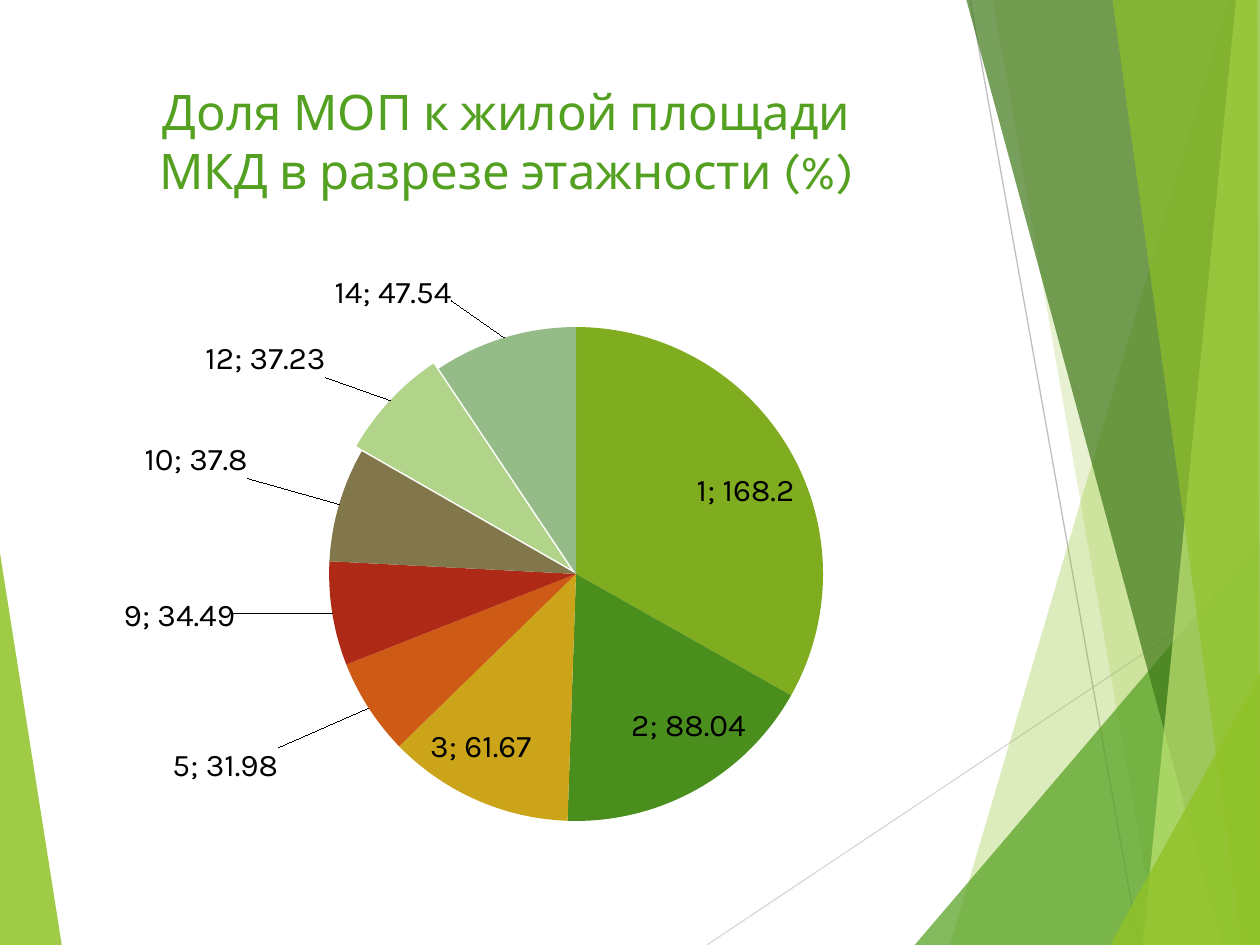
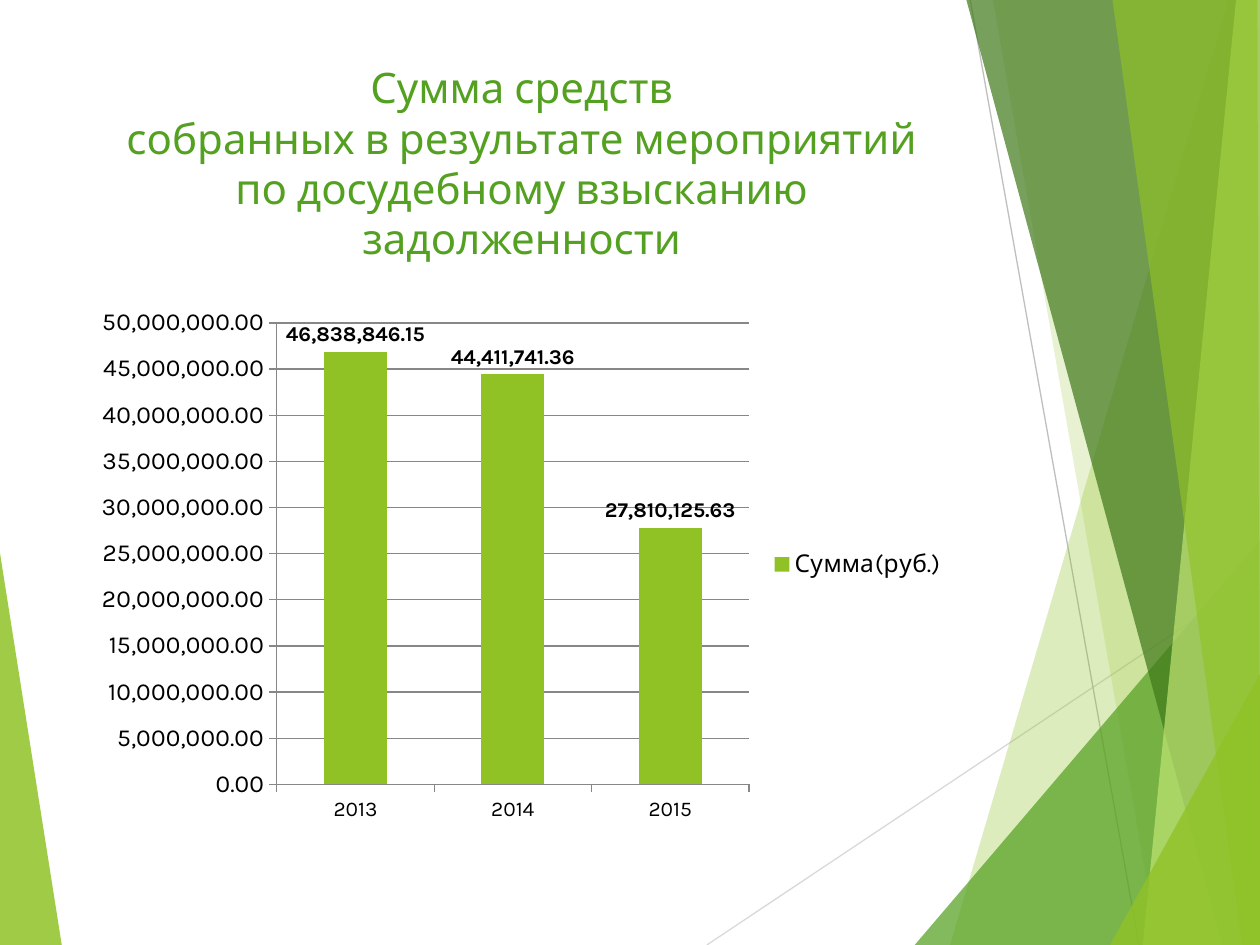
from lxml import etree
from pptx import Presentation
from pptx import util as u
from pptx.chart.data import CategoryChartData
from pptx.dml.color import RGBColor
from pptx.enum import chart as kinds, shapes, text
from pptx.oxml import ns

FONT = "Karla"
LIME = RGBColor(0x90, 0xC2, 0x26)
GREEN = RGBColor(0x54, 0xA0, 0x21)
DARK_GREEN = RGBColor(0x3F, 0x78, 0x19)
PALE_LIME = RGBColor(0xC0, 0xE4, 0x74)
LIGHT_GREY = RGBColor(0xD9, 0xD9, 0xD9)
GREY = RGBColor(0xBF, 0xBF, 0xBF)
AXIS_GREY = RGBColor(0x87, 0x87, 0x87)
BLACK = RGBColor(0, 0, 0)

WIDTH, HEIGHT = 10, 7.5

LEFT_FACET = (LIME, 85, [(0, 4.39), (0.49, HEIGHT), (0, HEIGHT)])
RIGHT_FACETS = [
    (LIME, 30, [(9.75, 0), (7.54, HEIGHT), (WIDTH, HEIGHT), (WIDTH, 0)]),
    (LIME, 20, [(7.88, 0), (9.19, HEIGHT), (WIDTH, HEIGHT), (WIDTH, 0)]),
    (GREEN, 72, [(7.26, HEIGHT), (WIDTH, 4.29), (WIDTH, HEIGHT)]),
    (DARK_GREEN, 70, [(7.67, 0), (9.7, HEIGHT), (WIDTH, HEIGHT), (WIDTH, 0)]),
    (PALE_LIME, 70, [(9.81, 0), (9.07, HEIGHT), (WIDTH, HEIGHT), (WIDTH, 0)]),
    (LIME, 65, [(8.83, 0), (9.86, HEIGHT), (WIDTH, HEIGHT), (9.98, 0)]),
    (LIME, 80, [(8.81, HEIGHT), (WIDTH, 5.35), (WIDTH, HEIGHT)]),
]
RAYS = [
    (LIGHT_GREY, (5.61, HEIGHT), (WIDTH, 4.57)),
    (GREY, (7.7, 0), (9.04, HEIGHT)),
]

FLOORS = {
    "title": ["Доля МОП к жилой площади МКД в разрезе этажности (%)"],
    "title_box": (0.83, 0.6, 6.38, 1.1),
    "title_size": 28,
    "chart_box": (0.98, 2.18, 6.69, 4.72),
    "plot_area": (0.244, 0.088, 0.586, 0.831),
    "slices": [
        ("1", 168.2, RGBColor(0x80, 0xAC, 0x20), None),
        ("2", 88.04, RGBColor(0x4A, 0x8F, 0x1D), None),
        ("3", 61.67, RGBColor(0xCB, 0xA4, 0x1A), None),
        ("5", 31.98, RGBColor(0xCD, 0x5B, 0x15), (-0.10, 0.06)),
        ("9", 34.49, RGBColor(0xAE, 0x2A, 0x17), (-0.11, -0.03)),
        ("10", 37.8, RGBColor(0x81, 0x77, 0x4A), (-0.10, -0.04)),
        ("12", 37.23, RGBColor(0xB1, 0xD3, 0x8A), (-0.07, -0.03)),
        ("14", 47.54, RGBColor(0x95, 0xBB, 0x89), (-0.06, -0.05)),
    ],
    "pulled_slice": "12",
}
DEBTS = {
    "title": ["Сумма средств", "собранных в результате мероприятий",
              "по досудебному взысканию задолженности"],
    "title_box": (0.67, 0.44, 6.94, 1.44),
    "title_size": 24,
    "chart_box": (0.67, 2.36, 6.94, 4.24),
    "plot_area": (0.22, 0.048, 0.54, 0.864),
    "series": "Сумма(руб.)",
    "years": [("2013", 46838846.15), ("2014", 44411741.36), ("2015", 27810125.63)],
    "top": 50_000_000,
    "step": 5_000_000,
}


def inches(values):
    return [u.Inches(value) for value in values]


def chart_element(tag, value=None):
    element = etree.Element(ns.qn("c:" + tag))
    if value is not None:
        element.set("val", str(value))
    return element


def manual_layout(values, inner=False):
    layout = chart_element("layout")
    manual = etree.SubElement(layout, ns.qn("c:manualLayout"))
    if inner:
        manual.append(chart_element("layoutTarget", "inner"))
        manual.append(chart_element("xMode", "edge"))
        manual.append(chart_element("yMode", "edge"))
    for tag, value in zip("xywh", values):
        manual.append(chart_element(tag, value))
    return layout


def style_font(font, size, color=BLACK, bold=False):
    font.name = FONT
    font.size = u.Pt(size)
    font.color.rgb = color
    font.bold = bold


def add_facet(page, color, opacity, corners):
    points = [(round(x * 100), round(y * 100)) for x, y in corners]
    builder = page.shapes.build_freeform(*points[0], scale=u.Inches(0.01))
    builder.add_line_segments(points[1:], close=True)
    facet = builder.convert_to_shape()
    facet.shadow.inherit = False
    facet.fill.solid()
    facet.fill.fore_color.rgb = color
    facet.line.fill.background()
    tint = facet.fill._xPr.find(".//" + ns.qn("a:srgbClr"))
    etree.SubElement(tint, ns.qn("a:alpha")).set("val", str(opacity * 1000))


def add_ray(page, color, start, end):
    ray = page.shapes.add_connector(shapes.MSO_CONNECTOR.STRAIGHT, *inches(start + end))
    ray.line.color.rgb = color
    ray.line.width = u.Pt(0.75)
    etree.SubElement(ray._element.spPr, ns.qn("a:effectLst"))


def add_title(page, lines, place, size):
    box = page.shapes.add_textbox(*inches(place))
    frame = box.text_frame
    frame.word_wrap = True
    frame.vertical_anchor = text.MSO_ANCHOR.TOP
    para = frame.paragraphs[0]
    para.alignment = text.PP_ALIGN.CENTER
    for index, line in enumerate(lines):
        if index:
            para.add_line_break()
        span = para.add_run()
        span.text = line
        style_font(span.font, size, GREEN)


def add_page(deck, content):
    page = deck.slides.add_slide(deck.slide_layouts[6])
    add_facet(page, *LEFT_FACET)
    for ray in RAYS:
        add_ray(page, *ray)
    for facet in RIGHT_FACETS:
        add_facet(page, *facet)
    add_title(page, content["title"], content["title_box"], content["title_size"])
    return page


def add_chart(page, kind, content, name, pairs):
    data = CategoryChartData()
    data.categories = [label for label, _ in pairs]
    data.add_series(name, [value for _, value in pairs])
    chart = page.shapes.add_chart(kind, *inches(content["chart_box"]), data).chart
    chart.has_title = False
    chart.has_legend = False
    style_font(chart.font, 18)
    area = chart._chartSpace.find(".//" + ns.qn("c:plotArea"))
    for old in area.findall(ns.qn("c:layout")):
        area.remove(old)
    area.insert(0, manual_layout(content["plot_area"], inner=True))
    return chart


def add_separator(labels):
    separator = chart_element("separator")
    separator.text = "; "
    labels.find(ns.qn("c:showBubbleSize")).addnext(separator)


def add_pie(page, content):
    slices = content["slices"]
    chart = add_chart(page, kinds.XL_CHART_TYPE.PIE, content, "Series 1",
                      [(floor, share) for floor, share, _, _ in slices])
    chart.plots[0].vary_by_categories = True
    series = chart.plots[0].series[0]
    labels = series.data_labels
    labels.show_value = True
    labels.show_category_name = True
    labels.position = kinds.XL_LABEL_POSITION.BEST_FIT
    style_font(labels.font, 18)
    add_separator(labels._element)
    leaders = labels._element.find(ns.qn("c:showLeaderLines"))
    if leaders is None:
        leaders = chart_element("showLeaderLines")
        labels._element.append(leaders)
    leaders.set("val", "1")
    for index, (floor, _, color, shift) in enumerate(slices):
        point = series.points[index]
        point.format.fill.solid()
        point.format.fill.fore_color.rgb = color
        point.format.line.fill.background()
        if floor == content["pulled_slice"]:
            point.format._element.spPr.addprevious(chart_element("explosion", 3))
        if shift:
            label = point.data_label
            label.position = kinds.XL_LABEL_POSITION.OUTSIDE_END
            style_font(label.font, 18)
            element = label._dLbl
            element.insert(1, manual_layout(shift))
            element.find(ns.qn("c:showCatName")).set("val", "1")
            add_separator(element)


def add_columns(page, content):
    chart = add_chart(page, kinds.XL_CHART_TYPE.COLUMN_CLUSTERED, content,
                      content["series"], content["years"])
    plot = chart.plots[0]
    plot.gap_width = 150
    plot.vary_by_categories = False
    series = plot.series[0]
    series.format.fill.solid()
    series.format.fill.fore_color.rgb = LIME
    labels = series.data_labels
    labels.show_value = True
    labels.number_format = "#,##0.00"
    labels.number_format_is_linked = False
    labels.position = kinds.XL_LABEL_POSITION.OUTSIDE_END
    style_font(labels.font, 12, bold=True)
    for axis, size in ((chart.category_axis, 12), (chart.value_axis, 14)):
        style_font(axis.tick_labels.font, size)
        axis.major_tick_mark = kinds.XL_TICK_MARK.OUTSIDE
        axis.format.line.color.rgb = AXIS_GREY
    amounts = chart.value_axis
    amounts.minimum_scale = 0
    amounts.maximum_scale = content["top"]
    amounts.major_unit = content["step"]
    amounts.tick_labels.number_format = "#,##0.00"
    amounts.tick_labels.number_format_is_linked = False
    amounts.has_major_gridlines = True
    amounts.major_gridlines.format.line.color.rgb = AXIS_GREY
    chart.has_legend = True
    chart.legend.position = kinds.XL_LEGEND_POSITION.RIGHT
    chart.legend.include_in_layout = False
    style_font(chart.legend.font, 14)


def main():
    deck = Presentation()
    deck.slide_width, deck.slide_height = inches((WIDTH, HEIGHT))
    add_pie(add_page(deck, FLOORS), FLOORS)
    add_columns(add_page(deck, DEBTS), DEBTS)
    deck.save("out.pptx")


if __name__ == "__main__":
    main()
